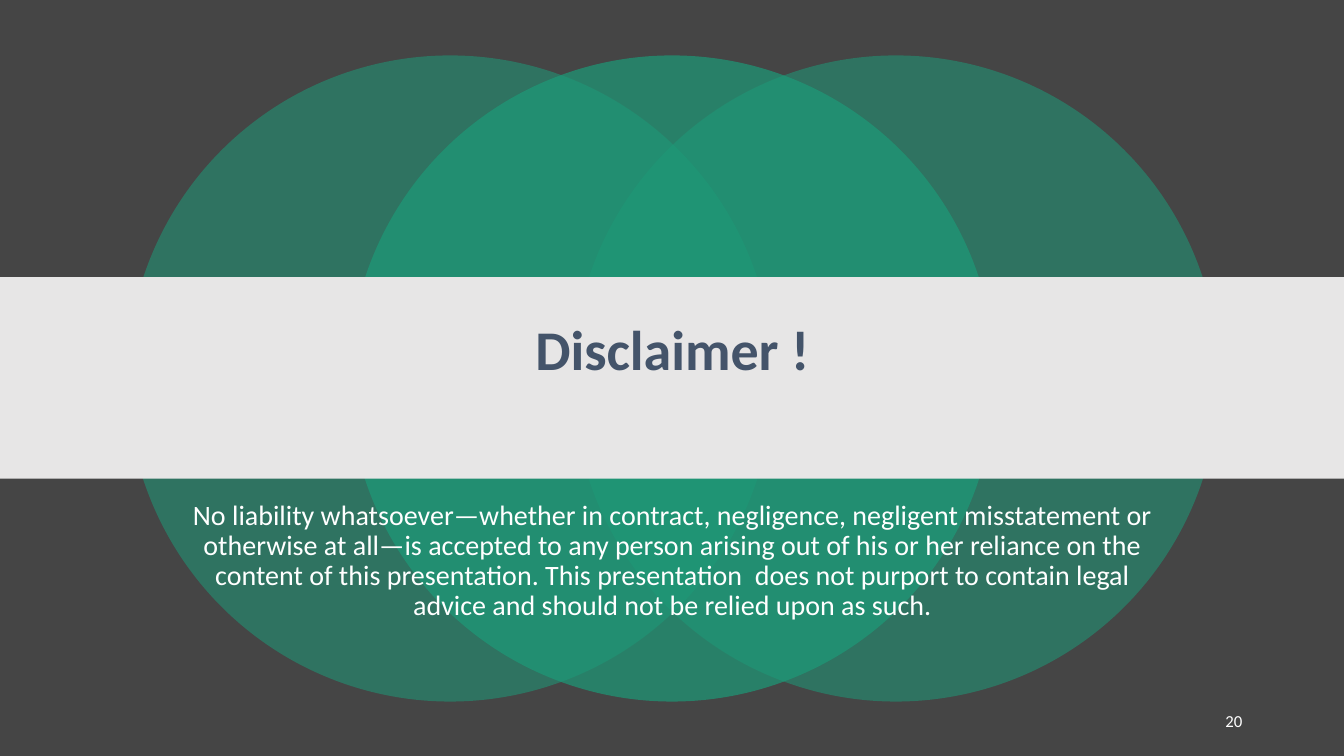
from dataclasses import dataclass

from lxml import etree
from pptx import Presentation
from pptx import util as u
from pptx.dml.color import RGBColor
from pptx.enum import shapes, text
from pptx.oxml import ns


@dataclass(frozen=True)
class Theme:
    background: str = "454545"
    circle: str = "1D9A78"
    band: str = "E7E6E6"
    heading: str = "44546A"
    light: str = "FFFFFF"
    font: str = "Calibri"
    heading_size: int = 40
    body_size: int = 20
    number_size: int = 12


@dataclass(frozen=True)
class Box:
    left: float
    top: float
    width: float
    height: float

    def lengths(self) -> tuple:
        return tuple(u.Inches(v) for v in (self.left, self.top, self.width, self.height))


@dataclass(frozen=True)
class Circle:
    left: float
    opacity: int


THEME = Theme()
WIDTH, HEIGHT = 13.33, 7.5
DIAMETER, CIRCLE_TOP = 6.41, 0.55
CIRCLES = (Circle(1.26, 55), Circle(5.68, 55), Circle(3.46, 70))
DISCLAIMER = (
    "No liability whatsoever—whether in contract, negligence, negligent misstatement "
    "or otherwise at all—is accepted to any person arising out of his or her reliance "
    "on the content of this presentation. This presentation  does not purport to contain "
    "legal advice and should not be relied upon as such."
)


def add_filled(slide, kind, box: Box, color: str, opacity: int = 100) -> None:
    shape = slide.shapes.add_shape(kind, *box.lengths())
    shape.shadow.inherit = False
    shape.line.fill.background()
    shape.fill.solid()
    shape.fill.fore_color.rgb = RGBColor.from_string(color)
    if opacity < 100:
        fill_color = shape.element.spPr.find(".//" + ns.qn("a:srgbClr"))
        etree.SubElement(fill_color, ns.qn("a:alpha"), val=str(opacity * 1000))


def write_text(shape, content: str, *, size: int, color: str, align, bold: bool = False,
               anchor=text.MSO_ANCHOR.TOP, line_spacing: float = 1.0,
               before: float = 0, after: float = 0, bottom_inset: float = 0.05) -> None:
    frame = shape.text_frame
    frame.word_wrap = True
    frame.auto_size = text.MSO_AUTO_SIZE.NONE
    frame.vertical_anchor = anchor
    frame.margin_bottom = u.Inches(bottom_inset)
    paragraph = frame.paragraphs[0]
    paragraph.alignment = align
    paragraph.line_spacing = line_spacing
    paragraph.space_before = u.Pt(before)
    paragraph.space_after = u.Pt(after)
    run = paragraph.add_run()
    run.text = content
    run.font.name = THEME.font
    run.font.size = u.Pt(size)
    run.font.bold = bold
    run.font.color.rgb = RGBColor.from_string(color)


def main() -> None:
    presentation = Presentation()
    presentation.slide_width = u.Inches(WIDTH)
    presentation.slide_height = u.Inches(HEIGHT)
    slide = presentation.slides.add_slide(presentation.slide_layouts.get_by_name("Title Only"))
    slide.background.fill.solid()
    slide.background.fill.fore_color.rgb = RGBColor.from_string(THEME.background)

    for circle in CIRCLES:
        add_filled(slide, shapes.MSO_SHAPE.OVAL,
                   Box(circle.left, CIRCLE_TOP, DIAMETER, DIAMETER),
                   THEME.circle, circle.opacity)

    body = slide.shapes.add_textbox(*Box(1.67, 4.92, 10, 0.83).lengths())
    write_text(body, DISCLAIMER, size=THEME.body_size, color=THEME.light,
               align=text.PP_ALIGN.CENTER, line_spacing=0.9, before=10)

    add_filled(slide, shapes.MSO_SHAPE.RECTANGLE, Box(0, 2.75, WIDTH, 2), THEME.band)

    title = slide.shapes.title
    title.left, title.top, title.width, title.height = Box(1.67, 3.04, 10, 1.51).lengths()
    write_text(title, "Disclaimer !", size=THEME.heading_size, color=THEME.heading,
               align=text.PP_ALIGN.CENTER, bold=True, anchor=text.MSO_ANCHOR.MIDDLE,
               line_spacing=0.9, bottom_inset=0.65)
    title.element.getparent().append(title.element)

    number = slide.shapes.add_textbox(*Box(9.42, 6.95, 3, 0.4).lengths())
    write_text(number, "20", size=THEME.number_size, color=THEME.light,
               align=text.PP_ALIGN.RIGHT, anchor=text.MSO_ANCHOR.MIDDLE, after=6)

    presentation.save("out.pptx")


if __name__ == "__main__":
    main()
